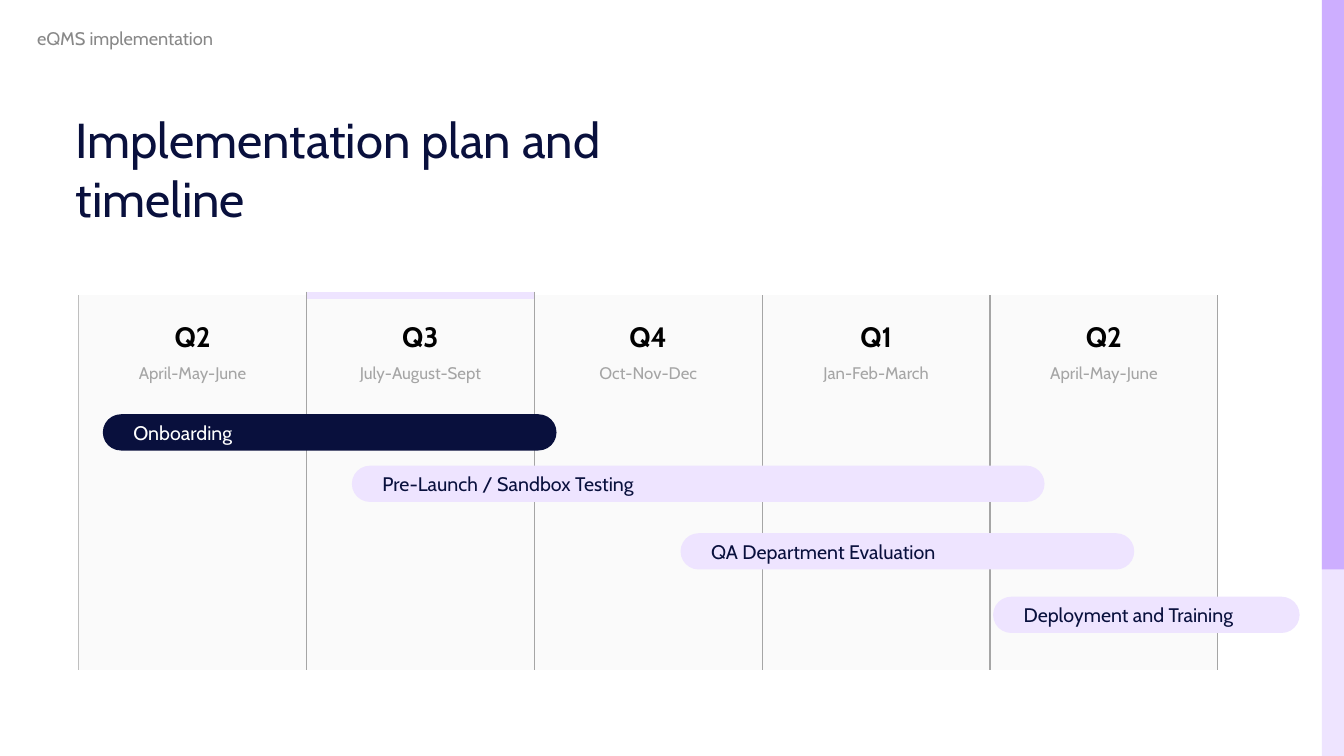
import pptx
import pptx.util
import pptx.dml.color
import pptx.enum.shapes
import pptx.enum.text
import pptx.oxml
import pptx.oxml.ns
from pptx.util import Inches

FONT = "Cabin"
COLORS = {
    "navy": "09103D",
    "violet": "CDAEFF",
    "lilac": "EEE4FF",
    "panel": "FAFAFA",
    "rule": "A5A5A5",
    "first_rule": "BFBFBF",
    "header": "888888",
    "black": "000000",
    "white": "FFFFFF",
}
QUARTERS = [
    ("Q2", "April-May-June"),
    ("Q3", "July-August-Sept"),
    ("Q4", "Oct-Nov-Dec"),
    ("Q1", "Jan-Feb-March"),
    ("Q2", "April-May-June"),
]
CURRENT_QUARTER = 1
# label, left, top, width, fill, text colour
PHASES = [
    ("Pre-Launch / Sandbox Testing", 3.49, 4.62, 6.87, "lilac", "navy"),
    ("Onboarding", 1.02, 4.11, 4.5, "navy", "white"),
    ("QA Department Evaluation", 6.75, 5.29, 4.5, "lilac", "navy"),
    ("Deployment and Training", 9.85, 5.92, 3.04, "lilac", "navy"),
]


def rgb(color):
    return pptx.dml.color.RGBColor.from_string(COLORS[color])


def add_run(paragraph, text, size, color, bold=False):
    run = paragraph.add_run()
    run.text = text
    run.font.name = FONT
    run.font.size = pptx.util.Pt(size)
    run.font.bold = bold
    run.font.color.rgb = rgb(color)


def set_margins(frame, left, top, right, bottom):
    frame.margin_left, frame.margin_top = Inches(left), Inches(top)
    frame.margin_right, frame.margin_bottom = Inches(right), Inches(bottom)


def add_block(slide, preset, left, top, width, height, fill):
    block = slide.shapes.add_shape(
        preset, Inches(left), Inches(top), Inches(width), Inches(height))
    block.shadow.inherit = False
    block.fill.solid()
    block.fill.fore_color.rgb = rgb(fill)
    block.line.fill.background()
    return block


def add_side_band(slide):
    rectangle = pptx.enum.shapes.MSO_SHAPE.RECTANGLE
    for top, fill in ((1.85, "lilac"), (0, "violet")):
        add_block(slide, rectangle, 13.11, top, 0.22, 5.65, fill)


def set_borders(cell, borders):
    """Draw the given sides as {side: (colour, points)} and hide the others."""
    properties = cell._tc.get_or_add_tcPr()
    for position, side in enumerate("LRTB"):
        color, points = borders.get(side, (None, 0))
        paint = (f'<a:solidFill><a:srgbClr val="{COLORS[color]}"/></a:solidFill>'
                 if color else "<a:noFill/>")
        line = pptx.oxml.parse_xml(
            f'<a:ln{side} {pptx.oxml.ns.nsdecls("a")} '
            f'w="{pptx.util.Pt(points)}">{paint}</a:ln{side}>')
        properties.insert(position, line)


def add_quarters(slide):
    table = slide.shapes.add_table(
        1, len(QUARTERS), Inches(0.78), Inches(2.93),
        Inches(11.3), Inches(3.72)).table
    table.first_row = table.horz_banding = False
    for index, (quarter, months) in enumerate(QUARTERS):
        table.columns[index].width = Inches(2.26)
        cell = table.cell(0, index)
        set_margins(cell, 0.05, 0.25, 0.05, 0.02)
        cell.fill.solid()
        cell.fill.fore_color.rgb = rgb("panel")
        borders = {"L": ("rule" if index else "first_rule", 1), "R": ("rule", 1)}
        if index == CURRENT_QUARTER:
            borders["T"] = ("lilac", 6)
        set_borders(cell, borders)

        heading = cell.text_frame.paragraphs[0]
        add_run(heading, quarter, 20, "black", bold=True)
        span = cell.text_frame.add_paragraph()
        span.space_before = pptx.util.Pt(6)
        add_run(span, months, 12, "rule")
        for paragraph in (heading, span):
            paragraph.alignment = pptx.enum.text.PP_ALIGN.CENTER


def add_phase(slide, label, left, top, width, fill, color):
    pill = pptx.enum.shapes.MSO_SHAPE.ROUNDED_RECTANGLE
    phase = add_block(slide, pill, left, top, width, 0.36, fill)
    phase.adjustments[0] = 0.5
    frame = phase.text_frame
    set_margins(frame, 0.25, 0.05, 0.1, 0.05)
    frame.vertical_anchor = pptx.enum.text.MSO_ANCHOR.MIDDLE
    frame.paragraphs[0].alignment = pptx.enum.text.PP_ALIGN.LEFT
    add_run(frame.paragraphs[0], label, 14, color)


def fill_title(slide, text):
    title = slide.shapes.title
    title.left, title.top = Inches(0.65), Inches(1.04)
    title.width, title.height = Inches(6.91), Inches(1.28)
    frame = title.text_frame
    frame.word_wrap = True
    frame.auto_size = pptx.enum.text.MSO_AUTO_SIZE.NONE
    frame.vertical_anchor = pptx.enum.text.MSO_ANCHOR.TOP
    set_margins(frame, 0.1, 0.05, 0.1, 0.05)
    frame.paragraphs[0].alignment = pptx.enum.text.PP_ALIGN.LEFT
    add_run(frame.paragraphs[0], text, 35, "navy")


def add_header(slide, text):
    header = slide.shapes.add_textbox(
        Inches(0.27), Inches(0.17), Inches(2.16), Inches(0.4))
    frame = header.text_frame
    frame.word_wrap = True
    set_margins(frame, 0.1, 0.1, 0.1, 0.1)
    add_run(frame.paragraphs[0], text, 13, "header")


def main():
    presentation = pptx.Presentation()
    presentation.slide_width = Inches(13.33)
    presentation.slide_height = Inches(7.5)
    slide = presentation.slides.add_slide(presentation.slide_layouts[5])
    add_side_band(slide)
    add_quarters(slide)
    for phase in PHASES:
        add_phase(slide, *phase)
    fill_title(slide, "Implementation plan and timeline")
    add_header(slide, "eQMS implementation")
    presentation.save("out.pptx")


if __name__ == "__main__":
    main()
